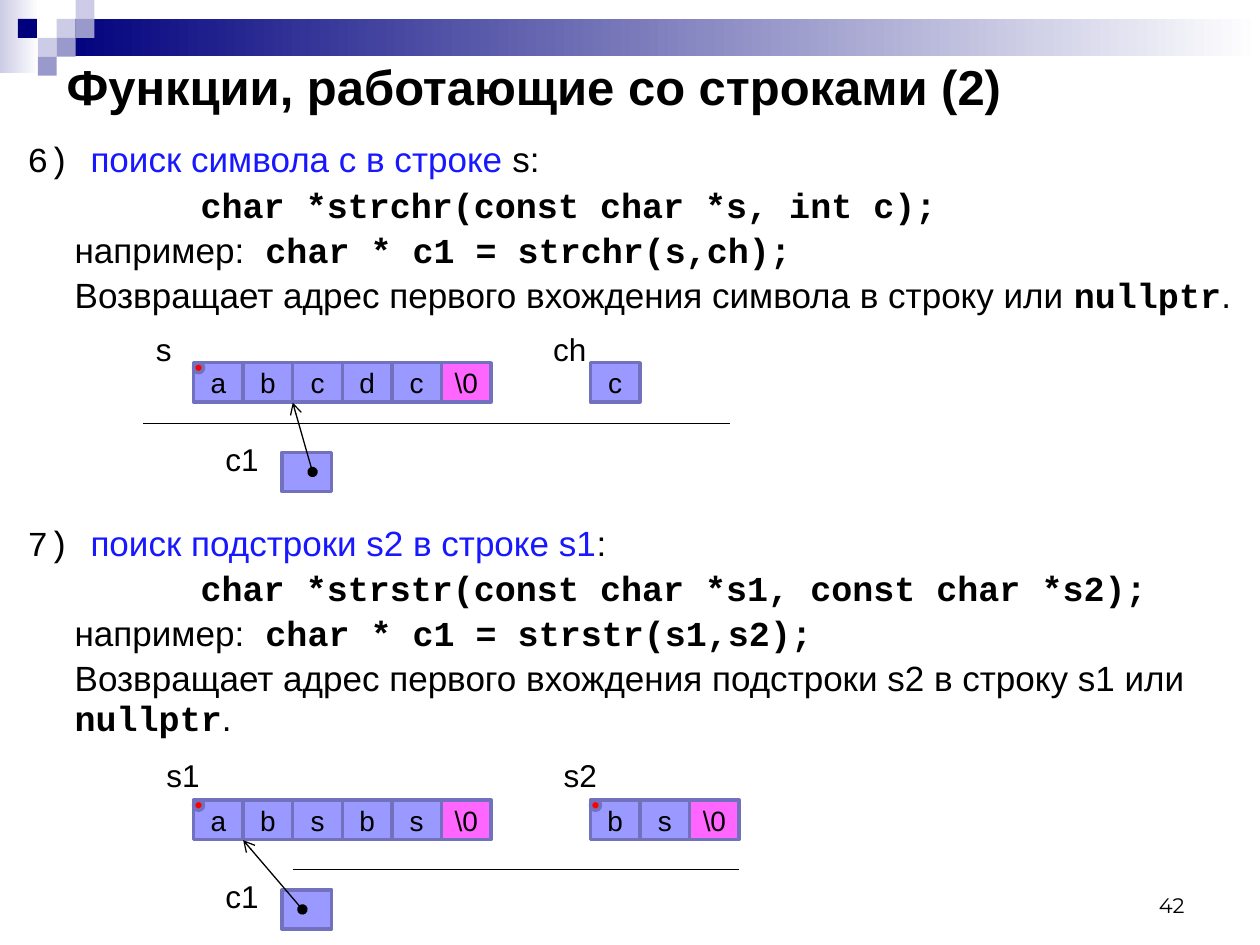
from lxml import etree
from pptx import Presentation
from pptx.dml.color import RGBColor
from pptx.enum.shapes import MSO_CONNECTOR as Connector, MSO_SHAPE as Shape
from pptx.enum.text import MSO_ANCHOR as Anchor, PP_ALIGN as Align
from pptx.oxml.ns import qn
from pptx.util import Pt

BLACK, BLUE, NAVY, WHITE = "000000", "1818FF", "00007D", "FFFFFF"
PALE, MEDIUM = "CCCCE6", "9999CC"
CELL, END_CELL, BORDER, RED = "9999FF", "FF66FF", "7171BD", "FF0000"
SANS, MONO = "Arial", "Courier New"

SQUARE = 10.8
CELL_WIDTH, CELL_HEIGHT = 28.35, 22.4
ROW_LEFT, ROW_TOP = 110.6, 207.3
SECOND_LEFT = ROW_LEFT + 8 * CELL_WIDTH
EXAMPLE_STEP = 250
HANGING, TEXT_INDENT, CODE_INDENT = (27, -27), (27, 0), (99, 0)


def color(value):
    return RGBColor.from_string(value)


def plain(text, ink=BLACK):
    return text, SANS, False, ink


def code(text, bold=True):
    return text, MONO, bold, BLACK


class SlideBuilder:
    """Keeps the current slide and the style shared by its elements."""

    def __init__(self, slide):
        self.slide = slide
        self.shapes = slide.shapes

    def add_run(self, paragraph, text, font=SANS, bold=False, ink=BLACK, size=20):
        run = paragraph.add_run()
        run.text = text
        run.font.name = font
        run.font.size = Pt(size)
        run.font.bold = bold
        run.font.color.rgb = color(ink)

    def box(self, left, top, width, height, fill, kind=Shape.RECTANGLE, border=None):
        shape = self.shapes.add_shape(kind, Pt(left), Pt(top), Pt(width), Pt(height))
        shape.shadow.inherit = False
        if isinstance(fill, tuple):
            shape.fill.gradient()
            shape.fill.gradient_angle = 0
            for stop, value in zip(shape.fill.gradient_stops, fill):
                stop.color.rgb = color(value)
        else:
            shape.fill.solid()
            shape.fill.fore_color.rgb = color(fill)
        if border:
            shape.line.color.rgb = color(border)
            shape.line.width = Pt(2)
        else:
            shape.line.fill.background()
        return shape

    def cell(self, left, top, text="", fill=CELL):
        shape = self.box(left, top, CELL_WIDTH, CELL_HEIGHT, fill, border=BORDER)
        if text:
            frame = shape.text_frame
            frame.margin_left = frame.margin_right = 0
            frame.margin_top = frame.margin_bottom = 0
            frame.vertical_anchor = Anchor.MIDDLE
            paragraph = frame.paragraphs[0]
            paragraph.alignment = Align.CENTER
            self.add_run(paragraph, text, size=16)

    def string(self, left, top, characters):
        """Draws the characters, the closing zero and the dot at the start address."""
        for index, character in enumerate(characters):
            self.cell(left + index * CELL_WIDTH, top, character)
        self.cell(left + len(characters) * CELL_WIDTH, top, "\\0", END_CELL)
        self.box(left, top, 5.7, 5.7, RED, Shape.OVAL, BORDER)

    def text(self, left, top, width, height, text, size=18, font=SANS, bold=False,
             align=Align.LEFT, anchor=Anchor.TOP, wrap=False):
        frame = self.text_frame(left, top, width, height, wrap)
        frame.vertical_anchor = anchor
        frame.paragraphs[0].alignment = align
        self.add_run(frame.paragraphs[0], text, font, bold, size=size)

    def text_frame(self, left, top, width, height, wrap=True):
        frame = self.shapes.add_textbox(Pt(left), Pt(top), Pt(width), Pt(height)).text_frame
        frame.word_wrap = wrap
        return frame

    def label(self, left, top, text):
        self.text(left, top, 34, 29, text)

    def description(self, top, height, paragraphs):
        """Writes paragraphs given as ((left margin, first indent), runs)."""
        frame = self.text_frame(8.6, top, 720, height)
        for index, ((margin, indent), runs) in enumerate(paragraphs):
            paragraph = frame.add_paragraph() if index else frame.paragraphs[0]
            paragraph.line_spacing = 0.95
            paragraph.space_before = Pt(3)
            properties = paragraph._p.get_or_add_pPr()
            properties.set("marL", str(Pt(margin)))
            properties.set("indent", str(Pt(indent)))
            for run in runs:
                self.add_run(paragraph, *run)

    def line(self, start, end, pointer=False):
        connector = self.shapes.add_connector(
            Connector.STRAIGHT, *(Pt(value) for value in (*start, *end)))
        connector.line.color.rgb = color(BLACK)
        connector.line.width = Pt(0.75)
        if pointer:
            outline = connector.line._get_or_add_ln()
            etree.SubElement(outline, qn("a:headEnd"), type="oval")
            etree.SubElement(outline, qn("a:tailEnd"), type="arrow")
        etree.SubElement(connector._element.spPr, qn("a:effectLst"))

    def result(self, row_top, start_x, target_index):
        """Draws pointer c1 aimed at the cell with the given index."""
        top = row_top + 51.2
        self.cell(161.2, top)
        self.label(121.7, row_top + 40.4, "c1")
        self.line((start_x, top + CELL_HEIGHT / 2),
                  (ROW_LEFT + target_index * CELL_WIDTH, row_top + CELL_HEIGHT + 0.4),
                  pointer=True)


def add_header(builder):
    builder.box(0, 0, 22.3, 41.8, (PALE, WHITE))
    builder.box(3 * SQUARE, SQUARE, 687.6, 21.3, (NAVY, WHITE))
    for column, row, fill in (
            (3, 1, PALE), (4, 0, PALE), (4, 1, MEDIUM), (2, 2, PALE),
            (0.95, 1, NAVY), (3, 2, MEDIUM), (2, 3, MEDIUM)):
        builder.box(column * SQUARE, row * SQUARE, SQUARE, SQUARE, fill)
    builder.text(31, 37.4, 648, 23, "Функции, работающие со строками (2)", 28,
                 bold=True, anchor=Anchor.MIDDLE, wrap=True)
    builder.text(516.2, 491.8, 167.8, 36, "42", 12, "Montserrat",
                 align=Align.RIGHT, anchor=Anchor.BOTTOM, wrap=True)


def add_character_search(builder):
    builder.description(77, 115, [
        (HANGING, [code("6) ", False), plain("поиск символа c в строке ", BLUE), plain("s:")]),
        (CODE_INDENT, [code("сhar *strchr(const char *s, int c);")]),
        (TEXT_INDENT, [plain("например:"), code(" char * c1 = strchr(s,ch);")]),
        (TEXT_INDENT, [plain("Возвращает адрес первого вхождения символа в строку или "),
                       code("nullptr"), plain(".")]),
    ])
    builder.string(ROW_LEFT, ROW_TOP, "abcdc")
    builder.cell(SECOND_LEFT, ROW_TOP, "c")
    builder.label(82, 185, "s")
    builder.label(309, 185, "ch")
    builder.line((82, 242), (417, 242))
    builder.result(ROW_TOP, 178.6, 2)


def add_substring_search(builder):
    row_top = ROW_TOP + EXAMPLE_STEP
    builder.description(296, 138, [
        (HANGING, [code("7) ", False), plain("поиск подстроки s2 в строке s1", BLUE), plain(":")]),
        (CODE_INDENT, [code("char *strstr(const char *s1, const char *s2);")]),
        (TEXT_INDENT, [plain("например:"), code(" char * c1 = strstr(s1,s2);")]),
        (TEXT_INDENT, [plain("Возвращает адрес первого вхождения подстроки s2 в строку s1 или "),
                       code("nullptr"), plain(".")]),
    ])
    builder.string(ROW_LEFT, row_top, "absbs")
    builder.string(SECOND_LEFT, row_top, "bs")
    builder.label(88, 428.5, "s1")
    builder.label(315, 428.5, "s2")
    builder.line((167.3, 497), (422.5, 497))
    builder.result(row_top, 172.8, 1)


def main():
    presentation = Presentation()
    presentation.slide_width, presentation.slide_height = Pt(720), Pt(540)
    builder = SlideBuilder(presentation.slides.add_slide(presentation.slide_layouts[6]))
    add_header(builder)
    add_character_search(builder)
    add_substring_search(builder)
    presentation.save("out.pptx")


if __name__ == "__main__":
    main()
